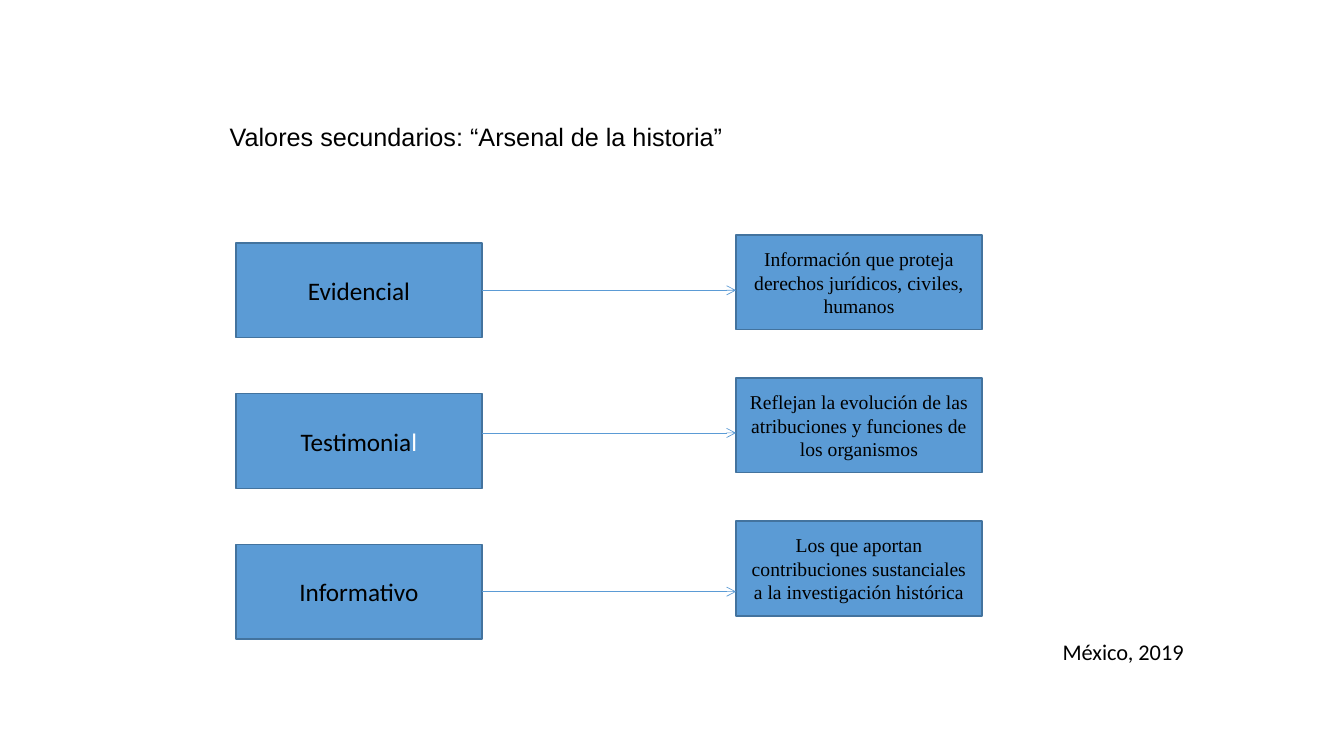
"""Build the slide on the secondary values of archives."""
from lxml import etree
from pptx import Presentation
from pptx import util as u
from pptx.dml.color import RGBColor
from pptx.enum import shapes, text
from pptx.oxml.ns import qn

COLORS = {"box": "5B9BD5", "edge": "43739E", "ink": "000000", "pale": "FFFFFF"}
BOX_W, BOX_H = 2.44, 0.94
VALUE_X, VALUE_Y, VALUE_PITCH = 2.34, 2.41, 1.495
MEANING_X, MEANING_Y, MEANING_PITCH = 7.3, 2.33, 1.42

ROWS = [
    (("Evidencial",), "Información que proteja derechos jurídicos, civiles, humanos", 0),
    (("Testimonia", "l"), "Reflejan la evolución de las atribuciones y funciones de los organismos", -0.08),
    (("Informativo",), "Los que aportan contribuciones sustanciales a la investigación histórica", 0),
]
CAPTIONS = [
    ("Valores secundarios: “Arsenal de la historia”", 2.18, 1.15, 5.19, 0.4, 18, "Arial"),
    ("México, 2019", 10.44, 6.28, 1.42, 0.37, 16, "Calibri"),
]


def style(paragraph, size, face):
    paragraph.font.size = u.Pt(size)
    paragraph.font.name = face
    paragraph.font.color.rgb = RGBColor.from_string(COLORS["ink"])


def add_box(left, top, runs, size, face):
    box = slide.shapes.add_shape(shapes.MSO_SHAPE.RECTANGLE, u.Inches(left), u.Inches(top),
                                 u.Inches(BOX_W), u.Inches(BOX_H))
    box.shadow.inherit = False
    box.fill.solid()
    box.fill.fore_color.rgb = RGBColor.from_string(COLORS["box"])
    box.line.color.rgb = RGBColor.from_string(COLORS["edge"])
    box.line.width = u.Pt(1)
    box.text_frame.word_wrap = True
    box.text_frame.vertical_anchor = text.MSO_ANCHOR.MIDDLE
    label = box.text_frame.paragraphs[0]
    label.alignment = text.PP_ALIGN.CENTER
    style(label, size, face)
    for words in runs:
        label.add_run().text = words
    return box


deck = Presentation()
deck.slide_width, deck.slide_height = u.Inches(13.33), u.Inches(7.5)
slide = deck.slides.add_slide(deck.slide_layouts[6])

for words, left, top, width, height, size, face in CAPTIONS:
    caption = slide.shapes.add_textbox(*map(u.Inches, (left, top, width, height))).text_frame
    caption.word_wrap = False
    caption.auto_size = text.MSO_AUTO_SIZE.SHAPE_TO_FIT_TEXT
    caption.text = words
    style(caption.paragraphs[0], size, face)

for row, (value_runs, meaning_words, arrow_shift) in enumerate(ROWS):
    value = add_box(VALUE_X, VALUE_Y + row * VALUE_PITCH, value_runs, 18, "Calibri")
    for tail_letter in value.text_frame.paragraphs[0].runs[1:]:
        tail_letter.font.color.rgb = RGBColor.from_string(COLORS["pale"])
    meaning = add_box(MEANING_X, MEANING_Y + row * MEANING_PITCH, (meaning_words,), 14, "Times New Roman")

    arrow_y = value.top + value.height // 2 + u.Inches(arrow_shift)
    arrow = slide.shapes.add_connector(shapes.MSO_CONNECTOR.STRAIGHT, value.left + value.width,
                                       arrow_y, meaning.left, arrow_y)
    if not arrow_shift:
        arrow.begin_connect(value, 3)
    arrow.line.color.rgb = RGBColor.from_string(COLORS["box"])
    arrow.line.width = u.Pt(0.5)
    etree.SubElement(arrow.line._get_or_add_ln(), qn("a:tailEnd"), type="arrow")
    etree.SubElement(arrow._element.spPr, qn("a:effectLst"))

deck.save("out.pptx")
